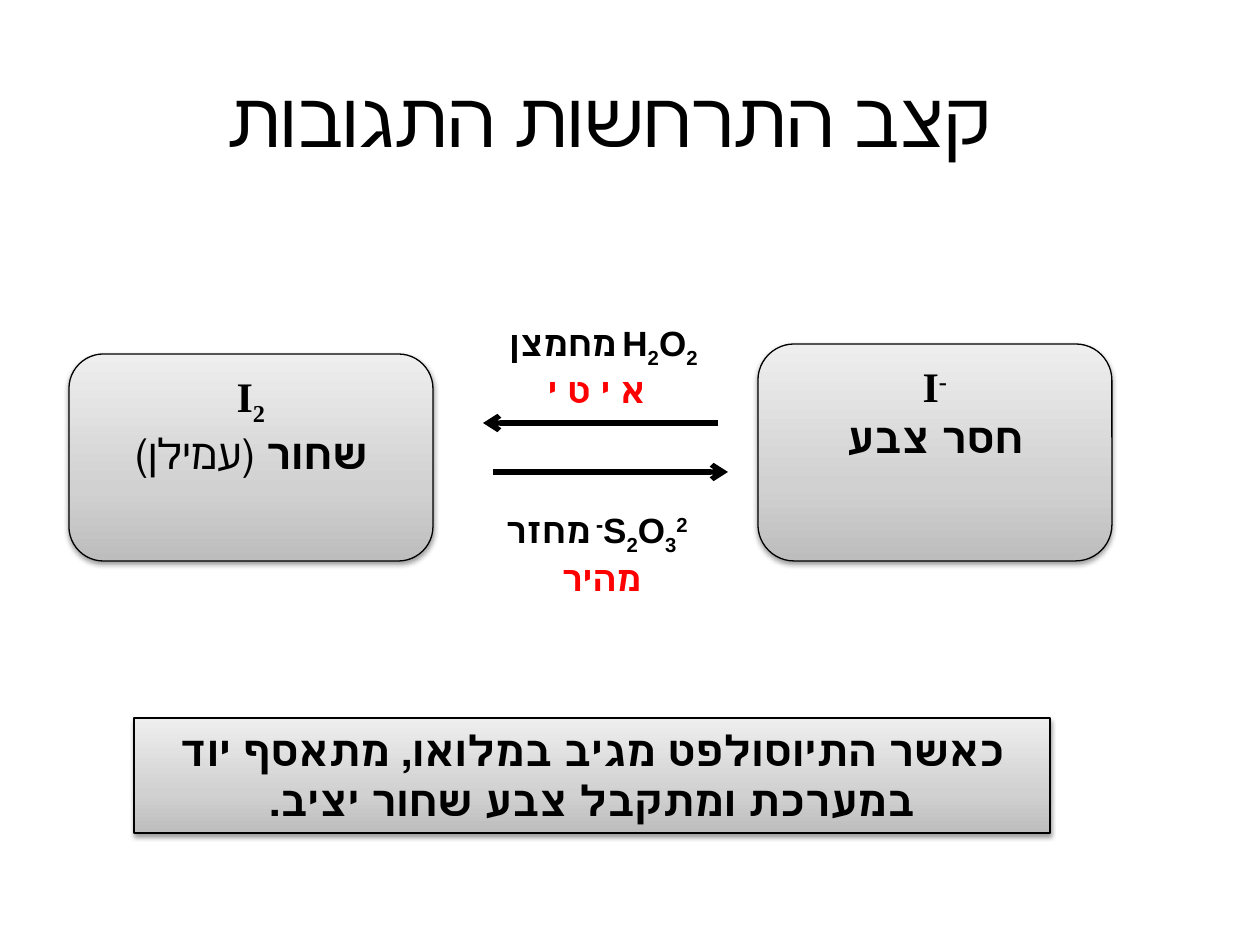
from lxml import etree
from pptx import Presentation
from pptx import util as u
from pptx.dml.color import RGBColor
from pptx.enum import shapes, text
from pptx.oxml import parse_xml
from pptx.oxml.ns import nsdecls, qn

EMU_PER_PX = 914400 / 126
BLACK = "000000"
RED = "FF0000"
SERIF = "Times New Roman"
GRADIENT = [(0, "BDBDBD"), (35, "D1D1D1"), (100, "EEEEEE")]
CENTER = text.PP_ALIGN.CENTER
RIGHT = text.PP_ALIGN.RIGHT


def px(n):
    return u.Emu(round(n * EMU_PER_PX))


def color(value):
    return RGBColor.from_string(value)


def add_run(p, content, size=24, font="Arial", fill=BLACK, bold=True, base=0):
    r = p.add_run()
    r.text = content
    r.font.size = u.Pt(size)
    r.font.name = font
    r.font.bold = bold
    r.font.color.rgb = color(fill)
    if base:
        r.font._element.set("baseline", str(base * 1000))


def write(sp, paragraphs, anchor=text.MSO_ANCHOR.TOP, **fmt):
    tf = sp.text_frame
    tf.word_wrap = True
    tf.vertical_anchor = anchor
    for i, (align, rtl, runs) in enumerate(paragraphs):
        p = tf.paragraphs[0] if i == 0 else tf.add_paragraph()
        p.alignment = align
        if rtl:
            p._p.get_or_add_pPr().set("rtl", "1")
        for content, own in runs:
            add_run(p, content, **{**fmt, **own})


def add_text(s, box, paragraphs, **fmt):
    sp = s.shapes.add_textbox(*map(px, box))
    write(sp, paragraphs, **fmt)


def add_panel(s, kind, box, paragraphs):
    sp = s.shapes.add_shape(kind, *map(px, box))
    sp.line.color.rgb = color(BLACK)
    sp.line.width = u.Pt(0.75)
    stops = "".join(
        f'<a:gs pos="{pos * 1000}"><a:srgbClr val="{c}"/></a:gs>' for pos, c in GRADIENT
    )
    sp._element.spPr.find(qn("a:ln")).addprevious(parse_xml(
        f'<a:gradFill {nsdecls("a")} rotWithShape="1"><a:gsLst>{stops}</a:gsLst>'
        '<a:lin ang="16200000" scaled="1"/></a:gradFill>'
    ))
    sp.shadow.inherit = False
    sp._element.spPr.find(qn("a:effectLst")).append(parse_xml(
        f'<a:outerShdw {nsdecls("a")} blurRad="{u.Pt(3.1)}" dist="{u.Pt(1.6)}" '
        'dir="5400000" rotWithShape="0"><a:srgbClr val="000000">'
        '<a:alpha val="38000"/></a:srgbClr></a:outerShdw>'
    ))
    write(sp, paragraphs)


def add_arrow(s, x1, x2, y):
    line = s.shapes.add_connector(
        shapes.MSO_CONNECTOR.STRAIGHT, px(x1), px(y), px(x2), px(y)
    )
    line.line.color.rgb = color(BLACK)
    line.line.width = u.Pt(3)
    etree.SubElement(line.line._get_or_add_ln(), qn("a:tailEnd"), type="arrow")
    etree.SubElement(line._element.spPr, qn("a:effectLst"))


def main():
    prs = Presentation()
    prs.slide_width, prs.slide_height = px(1260), px(945)
    s = prs.slides.add_slide(prs.slide_layouts[6])
    rounded = shapes.MSO_SHAPE.ROUNDED_RECTANGLE
    sub, sup = {"base": -25}, {"base": 30}

    add_text(s, (127, 33, 966, 168), [
        (CENTER, True, [("קצב התרחשות התגובות", {})]),
    ], anchor=text.MSO_ANCHOR.MIDDLE, size=44, bold=False)

    add_panel(s, rounded, (758, 344, 354, 217), [
        (CENTER, False, [("I", {"font": SERIF}), ("-", {"font": SERIF, **sup})]),
        (CENTER, False, [("חסר צבע", {})]),
    ])
    add_panel(s, rounded, (69, 354, 364, 207), [
        (CENTER, False, [("I", {"font": SERIF}), ("2", {"font": SERIF, **sub})]),
        (CENTER, False, [("שחור", {}), (" (עמילן)", {"bold": False})]),
    ])

    add_arrow(s, 718, 483, 423)
    add_arrow(s, 493, 728, 472)

    add_text(s, (483, 315, 227, 97), [
        (RIGHT, True, [("H", {}), ("2", sub), ("O", {}), ("2 ", sub), ("מחמצן", {})]),
        (CENTER, True, [("א י ט י", {"fill": RED})]),
    ], size=20)
    add_text(s, (493, 502, 217, 97), [
        (RIGHT, True, [(" S", {}), ("2", sub), ("O", {}), ("3", sub),
                       ("2- ", sup), ("מחזר", {})]),
        (CENTER, True, [("מהיר", {"fill": RED})]),
    ], size=20)

    add_panel(s, shapes.MSO_SHAPE.RECTANGLE, (134, 718, 916, 115), [
        (CENTER, True, [
            ("כאשר התיוסולפט מגיב במלואו, מתאסף יוד במערכת ומתקבל צבע שחור יציב.", {}),
        ]),
    ])
    prs.save("out.pptx")


if __name__ == "__main__":
    main()
